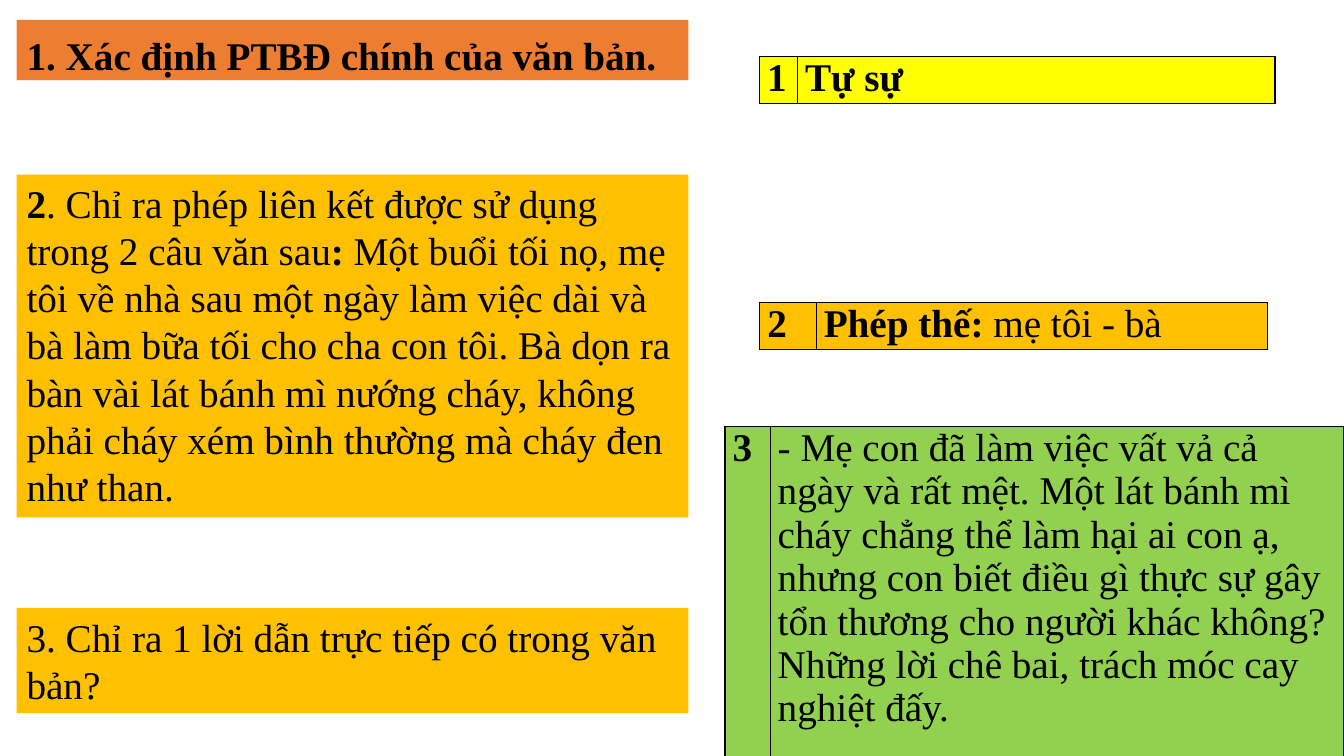
from dataclasses import dataclass

from lxml import etree
from pptx import Presentation
from pptx import util as u
from pptx.dml.color import RGBColor
from pptx.enum import shapes, text
from pptx.oxml.ns import qn


@dataclass(frozen=True)
class Theme:
    font: str = "Times New Roman"
    size: int = 28
    ink: str = "000000"
    orange: str = "ED7D31"
    gold: str = "FFC000"
    yellow: str = "FFFF00"
    green: str = "92D050"
    rule: float = 1


@dataclass(frozen=True)
class Run:
    text: str
    bold: bool = False


@dataclass(frozen=True)
class Ask:
    top: float
    height: float
    fill: str
    runs: tuple[Run, ...]
    pitch: float = 1.0


@dataclass(frozen=True)
class Reply:
    left: float
    top: float
    height: float
    widths: tuple[float, float]
    fill: str
    label: str
    runs: tuple[Run, ...]
    pitch: float = 1.0


THEME = Theme()
ASK_LEFT, ASK_WIDTH = 0.42, 16.93

ASKS = (
    Ask(0.5, 1.52, THEME.orange,
        (Run("1. Xác định PTBĐ chính của văn bản.", True),), 1.15),
    Ask(4.4, 8.64, THEME.gold, (
        Run("2", True),
        Run(". Chỉ ra phép liên kết được sử dụng trong 2 câu văn sau"),
        Run(": ", True),
        Run("Một buổi tối nọ, mẹ tôi về nhà sau một ngày làm việc dài và bà làm "
            "bữa tối cho cha con tôi. Bà dọn ra bàn vài lát bánh mì nướng cháy, "
            "không phải cháy xém bình thường mà cháy đen như than."))),
    Ask(15.32, 2.65, THEME.gold,
        (Run("3. Chỉ ra 1 lời dẫn trực tiếp có trong văn bản?"),)),
)

REPLIES = (
    Reply(19.14, 1.42, 1.19, (0.96, 12.03), THEME.yellow, "1",
          (Run("Tự sự", True),)),
    Reply(19.15, 7.62, 1.19, (1.42, 11.37), THEME.gold, "2",
          (Run("Phép thế: ", True), Run("mẹ tôi - bà"))),
    Reply(18.27, 10.75, 8.3, (1.14, 14.45), THEME.green, "3",
          (Run("- Mẹ con đã làm việc vất vả cả ngày và rất mệt. Một lát bánh mì "
               "cháy chẳng thể làm hại ai con ạ, nhưng con biết điều gì thực sự "
               "gây tổn thương cho người khác không? Những lời chê bai, trách "
               "móc cay nghiệt đấy."),)),
)


def write(frame, runs: tuple[Run, ...], pitch: float) -> None:
    para = frame.paragraphs[0]
    para.alignment = text.PP_ALIGN.LEFT
    para.line_spacing = pitch
    font = para.font
    font.name, font.size = THEME.font, u.Pt(THEME.size)
    font.color.rgb = RGBColor.from_string(THEME.ink)
    for part in runs:
        run = para.add_run()
        run.text, run.font.bold = part.text, part.bold


def border(cell) -> None:
    props = cell._tc.get_or_add_tcPr()
    for spot, side in enumerate(("lnL", "lnR", "lnT", "lnB")):
        line = etree.Element(qn(f"a:{side}"), w=str(u.Pt(THEME.rule)))
        fill = etree.SubElement(line, qn("a:solidFill"))
        etree.SubElement(fill, qn("a:srgbClr"), val=THEME.ink)
        props.insert(spot, line)


def draw_ask(slide, ask: Ask) -> None:
    box = slide.shapes.add_shape(
        shapes.MSO_SHAPE.RECTANGLE, u.Cm(ASK_LEFT), u.Cm(ask.top),
        u.Cm(ASK_WIDTH), u.Cm(ask.height))
    box.shadow.inherit = False
    box.fill.solid()
    box.fill.fore_color.rgb = RGBColor.from_string(ask.fill)
    box.line.fill.background()
    frame = box.text_frame
    frame.word_wrap = True
    frame.auto_size = text.MSO_AUTO_SIZE.SHAPE_TO_FIT_TEXT
    frame.vertical_anchor = text.MSO_ANCHOR.TOP
    write(frame, ask.runs, ask.pitch)


def draw_reply(slide, reply: Reply) -> None:
    table = slide.shapes.add_table(
        1, 2, u.Cm(reply.left), u.Cm(reply.top),
        u.Cm(sum(reply.widths)), u.Cm(reply.height)).table
    table.first_row = table.horz_banding = False
    texts = ((Run(reply.label, True),), reply.runs)
    for col, (width, runs) in enumerate(zip(reply.widths, texts)):
        table.columns[col].width = u.Cm(width)
        cell = table.cell(0, col)
        cell.margin_left = cell.margin_right = u.Cm(0.19)
        cell.margin_top = cell.margin_bottom = 0
        cell.fill.solid()
        cell.fill.fore_color.rgb = RGBColor.from_string(reply.fill)
        write(cell.text_frame, runs, reply.pitch)
        border(cell)


def main() -> None:
    deck = Presentation()
    deck.slide_width, deck.slide_height = u.Cm(33.87), u.Cm(19.05)
    slide = deck.slides.add_slide(deck.slide_layouts[6])
    for ask in ASKS:
        draw_ask(slide, ask)
    for reply in REPLIES:
        draw_reply(slide, reply)
    deck.save("out.pptx")


if __name__ == "__main__":
    main()
